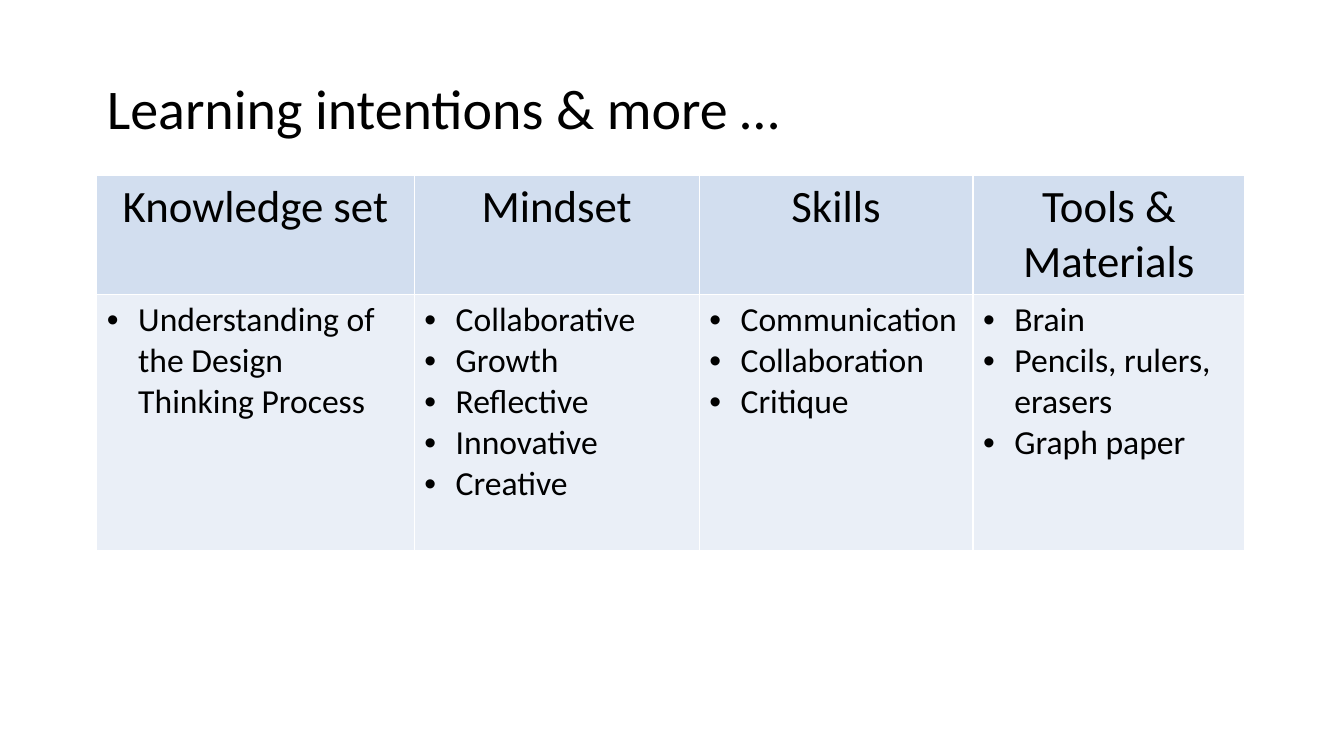
from dataclasses import dataclass

from lxml.etree import SubElement
from pptx import Presentation
from pptx.dml.color import RGBColor
from pptx.enum.text import PP_ALIGN as Align
from pptx.oxml import parse_xml
from pptx.oxml.ns import nsdecls, qn
from pptx.table import _Cell as Cell
from pptx.util import Cm, Pt

COLOURS = {
    "text": "000000",
    "border": "FFFFFF",
    "heading": "D2DEEF",
    "body": "EAEFF7",
}
FONT = "Calibri"
TITLE = "Learning intentions & more …"
ROW_HEIGHTS = (2.6, 2.97, 6.45)
BULLET_INDENT = Cm(0.79)


@dataclass(frozen=True)
class Topic:
    heading: str
    width: float
    items: tuple[str, ...]


TOPICS = (
    Topic("Knowledge set", 8.0, ("Understanding of the Design Thinking Process",)),
    Topic("Mindset", 7.18, ("Collaborative", "Growth", "Reflective", "Innovative", "Creative")),
    Topic("Skills", 6.9, ("Communication", "Collaboration", "Critique")),
    Topic("Tools & Materials", 6.85, ("Brain", "Pencils, rulers, erasers", "Graph paper")),
)


def write_text(cell: Cell, *lines: str, size: int, align: Align = Align.LEFT, bullet: bool = False) -> None:
    frame = cell.text_frame
    for index, line in enumerate(lines):
        para = frame.add_paragraph() if index else frame.paragraphs[0]
        para.alignment = align
        if bullet:
            properties = para._p.get_or_add_pPr()
            properties.set("marL", str(BULLET_INDENT))
            properties.set("indent", str(-BULLET_INDENT))
            SubElement(properties, qn("a:buFont"), typeface="Arial")
            SubElement(properties, qn("a:buChar"), char="•")
        span = para.add_run()
        span.text = line
        span.font.name = FONT
        span.font.size = Pt(size)
        span.font.bold = False
        span.font.color.rgb = RGBColor.from_string(COLOURS["text"])


def paint_cell(cell: Cell, fill: str | None = None, top: float = 1, bottom: float = 1) -> None:
    if fill:
        cell.fill.solid()
        cell.fill.fore_color.rgb = RGBColor.from_string(COLOURS[fill])
    else:
        cell.fill.background()
    properties = cell._tc.get_or_add_tcPr()
    widths = {"lnL": 1, "lnR": 1, "lnT": top, "lnB": bottom}
    for index, (side, width) in enumerate(widths.items()):
        line = parse_xml(
            f'<a:{side} {nsdecls("a")} w="{Pt(width)}"><a:solidFill>'
            f'<a:srgbClr val="{COLOURS["border"]}"/></a:solidFill></a:{side}>'
        )
        properties.insert(index, line)


def main() -> None:
    deck = Presentation()
    deck.slide_width, deck.slide_height = Cm(33.87), Cm(19.05)
    page = deck.slides.add_slide(deck.slide_layouts[6])
    total_width = sum(topic.width for topic in TOPICS)
    box = page.shapes.add_table(
        len(ROW_HEIGHTS), len(TOPICS), Cm(2.44), Cm(1.8), Cm(total_width), Cm(sum(ROW_HEIGHTS))
    )
    table = box.table
    table.first_row = table.horz_banding = False
    for row, height in zip(table.rows, ROW_HEIGHTS):
        row.height = Cm(height)

    for column, topic in enumerate(TOPICS):
        table.columns[column].width = Cm(topic.width)
        title, heading, body = (table.cell(row, column) for row in range(len(ROW_HEIGHTS)))
        paint_cell(title, bottom=3)
        paint_cell(heading, "heading", top=3)
        paint_cell(body, "body")
        write_text(heading, topic.heading, size=32, align=Align.CENTER)
        write_text(body, *topic.items, size=24, bullet=True)

    title = table.cell(0, 0)
    title.merge(table.cell(0, len(TOPICS) - 1))
    write_text(title, TITLE, size=40)
    deck.save("out.pptx")


if __name__ == "__main__":
    main()
